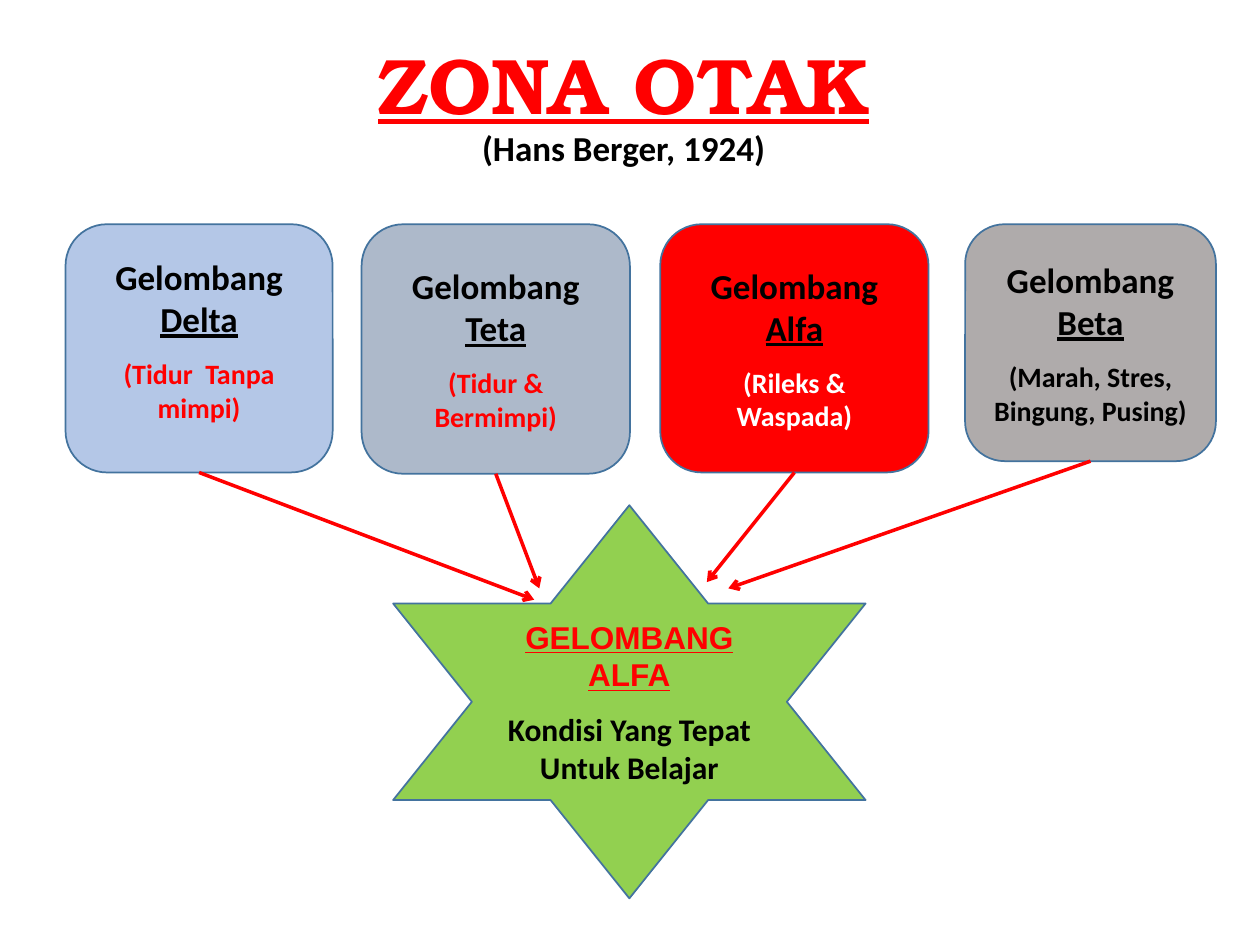
import pptx
import pptx.dml.color
import pptx.enum.shapes
import pptx.enum.text
import pptx.oxml
import pptx.oxml.ns
import pptx.util
from pptx.util import Inches

COLORS = {
    "red": "FF0000", "black": "000000", "white": "FFFFFF", "outline": "43739E",
    "delta": "B4C7E7", "teta": "ADB9CA", "beta": "AFABAB", "star": "92D050",
}
SHAPES = pptx.enum.shapes.MSO_SHAPE
ANCHORS = pptx.enum.text.MSO_ANCHOR
GAP = pptx.util.Pt(9.8)

# name, description, description colour, fill, box, extra bottom inset
WAVES = [
    ("Delta", "(Tidur  Tanpa mimpi)", "red", "delta", (0.52, 1.78, 2.12, 1.97), GAP),
    ("Teta", "(Tidur & Bermimpi)", "red", "teta", (2.87, 1.78, 2.13, 1.98), 0),
    ("Alfa", "(Rileks & Waspada)", "white", "red", (5.24, 1.78, 2.13, 1.97), 0),
    ("Beta", "(Marah, Stres, Bingung, Pusing)", "black", "beta", (7.66, 1.78, 1.99, 1.88), 0),
]
ARROW_TIPS = [(4.24, 4.76), (4.28, 4.67), (5.61, 4.62), (5.78, 4.67)]


def rgb(name):
    return pptx.dml.color.RGBColor.from_string(COLORS[name])


def style_run(run, size, color, font="Calibri", underline=False):
    run.font.size = pptx.util.Pt(size)
    run.font.name = font
    run.font.bold = True
    run.font.underline = underline
    run.font.color.rgb = rgb(color)


def center(paragraph):
    paragraph.alignment = pptx.enum.text.PP_ALIGN.CENTER


def add_title(slide, box):
    frame = slide.shapes.add_textbox(*map(Inches, box)).text_frame
    frame.word_wrap = True
    frame.vertical_anchor = ANCHORS.BOTTOM
    heading = frame.paragraphs[0]
    heading.text = "ZONA OTAK\v(Hans Berger, 1924)"
    heading.line_spacing = 0.9
    center(heading)
    title, author = heading.runs
    style_run(title, 45, "red", "TeX Gyre Bonum", True)
    style_run(author, 20, "black")


def add_panel(slide, kind, box, fill):
    """Add an outlined shape with two centred paragraphs, the second set apart."""
    panel = slide.shapes.add_shape(kind, *map(Inches, box))
    panel.shadow.inherit = False
    panel.fill.solid()
    panel.fill.fore_color.rgb = rgb(fill)
    panel.line.color.rgb = rgb("outline")
    panel.line.width = pptx.util.Pt(1)
    frame = panel.text_frame
    frame.word_wrap = True
    frame.vertical_anchor = ANCHORS.MIDDLE
    heading, detail = frame.paragraphs[0], frame.add_paragraph()
    center(heading)
    center(detail)
    detail.space_before = GAP
    return frame, heading, detail


def add_wave(slide, name, description, color, fill, box, extra_inset):
    frame, heading, detail = add_panel(slide, SHAPES.ROUNDED_RECTANGLE, box, fill)
    frame.margin_bottom = Inches(0.05) + extra_inset
    heading.text = "Gelombang "
    heading.add_run().text = name
    label, wave = heading.runs
    style_run(label, 20, "black")
    style_run(wave, 20, "black", underline=True)
    detail.text = description
    style_run(detail.runs[0], 16, color)


def add_star(slide, box):
    _, heading, detail = add_panel(slide, SHAPES.STAR_6_POINT, box, "star")
    heading.text = "GELOMBANG ALFA"
    style_run(heading.runs[0], 18, "red", "Arial", True)
    detail.text = "Kondisi Yang Tepat Untuk Belajar"
    style_run(detail.runs[0], 18, "black")


def add_arrow(slide, box, tip):
    """Draw an arrow from the middle of the box's bottom edge to the tip."""
    left, top, width, height = box
    start = left + width / 2, top + height
    arrow = slide.shapes.add_connector(
        pptx.enum.shapes.MSO_CONNECTOR.STRAIGHT, *map(Inches, start + tip))
    arrow.line.color.rgb = rgb("red")
    arrow.line.width = pptx.util.Pt(2)
    head = pptx.oxml.parse_xml(
        f'<a:tailEnd {pptx.oxml.ns.nsdecls("a")} type="arrow"/>')
    arrow.line._get_or_add_ln().append(head)
    arrow._element.spPr.append(
        pptx.oxml.parse_xml(f'<a:effectLst {pptx.oxml.ns.nsdecls("a")}/>'))


def main():
    deck = pptx.Presentation()
    deck.slide_width, deck.slide_height = Inches(10), Inches(7.5)
    slide = deck.slides.add_slide(deck.slide_layouts[6])
    add_title(slide, (0.7, 0.07, 8.5, 1.32))
    for wave in WAVES:
        add_wave(slide, *wave)
    add_star(slide, (3.12, 4.01, 3.75, 3.12))
    for (*_, box, _), tip in zip(WAVES, ARROW_TIPS):
        add_arrow(slide, box, tip)
    deck.save("out.pptx")


if __name__ == "__main__":
    main()
